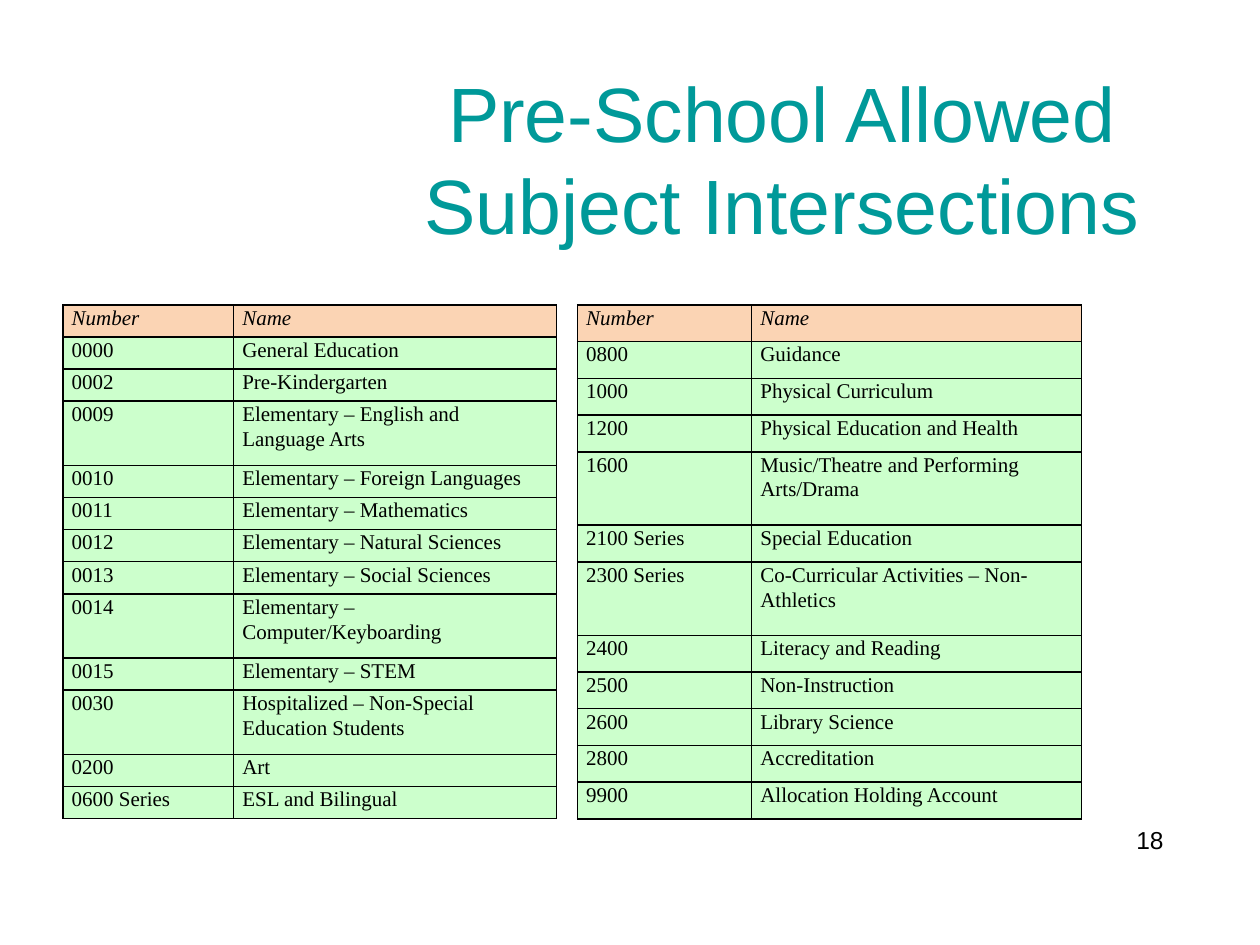
"""Build the slide listing the subject intersections allowed for pre-school."""
from dataclasses import dataclass

from lxml.etree import SubElement
from pptx import Presentation
from pptx.dml.color import RGBColor
from pptx.enum.text import MSO_ANCHOR, PP_ALIGN
from pptx.oxml.ns import qn
from pptx.slide import Slide
from pptx.table import _Cell
from pptx.text.text import Font
from pptx.util import Pt

BLACK, TEAL, PEACH, GREEN = "000000", "009999", "FBD4B4", "CCFFCC"
TABLE_TOP, TABLE_HEIGHT = 174.24, 293.76


@dataclass
class Label:
    text: str
    left: float
    top: float
    width: float
    height: float
    size: float
    color: str
    align: PP_ALIGN
    anchor: MSO_ANCHOR


@dataclass
class Subject:
    number: str
    name: str
    lines: int = 1


@dataclass
class SubjectTable:
    left: float
    widths: tuple[float, float]
    subjects: list[Subject]


LABELS = [
    Label("18", 504, 468, 168, 37.5, 14, BLACK, PP_ALIGN.RIGHT, MSO_ANCHOR.TOP),
    Label("Pre-School Allowed Subject Intersections", 216, 18, 462, 144, 44, TEAL,
          PP_ALIGN.CENTER, MSO_ANCHOR.MIDDLE),
]

TABLES = [
    SubjectTable(36, (97.5, 184.5), [
        Subject("0000", "General Education"),
        Subject("0002", "Pre-Kindergarten"),
        Subject("0009", "Elementary – English and Language Arts", 2),
        Subject("0010", "Elementary – Foreign Languages"),
        Subject("0011", "Elementary – Mathematics"),
        Subject("0012", "Elementary – Natural Sciences"),
        Subject("0013", "Elementary – Social Sciences"),
        Subject("0014", "Elementary – Computer/Keyboarding", 2),
        Subject("0015", "Elementary – STEM"),
        Subject("0030", "Hospitalized – Non-Special Education Students", 2),
        Subject("0200", "Art"),
        Subject("0600 Series", "ESL and Bilingual"),
    ]),
    SubjectTable(330, (99.5, 188.5), [
        Subject("0800", "Guidance"),
        Subject("1000", "Physical Curriculum"),
        Subject("1200", "Physical Education and Health"),
        Subject("1600", "Music/Theatre and Performing Arts/Drama", 2),
        Subject("2100 Series", "Special Education"),
        Subject("2300 Series", "Co-Curricular Activities – Non-Athletics", 2),
        Subject("2400", "Literacy and Reading"),
        Subject("2500", "Non-Instruction"),
        Subject("2600", "Library Science"),
        Subject("2800", "Accreditation"),
        Subject("9900", "Allocation Holding Account"),
    ]),
]


def rgb(color: str) -> RGBColor:
    return RGBColor.from_string(color)


def style_font(font: Font, name: str, size: float, color: str) -> None:
    font.name, font.size = name, Pt(size)
    font.color.rgb = rgb(color)


def add_label(s: Slide, label: Label) -> None:
    sp = s.shapes.add_textbox(Pt(label.left), Pt(label.top), Pt(label.width), Pt(label.height))
    tf = sp.text_frame
    tf.word_wrap, tf.vertical_anchor = True, label.anchor
    tf.text = label.text
    p = tf.paragraphs[0]
    p.alignment = label.align
    style_font(p.runs[0].font, "Arial", label.size, label.color)


def add_borders(cell: _Cell) -> None:
    tc_pr = cell._tc.get_or_add_tcPr()
    for side in ("a:lnL", "a:lnR", "a:lnT", "a:lnB"):
        line = SubElement(tc_pr, qn(side), w=str(Pt(1)))
        SubElement(SubElement(line, qn("a:solidFill")), qn("a:srgbClr"), val=BLACK)


def fill_cell(cell: _Cell, text: str, header: bool) -> None:
    add_borders(cell)
    cell.fill.solid()
    cell.fill.fore_color.rgb = rgb(PEACH if header else GREEN)
    cell.margin_left = cell.margin_right = Pt(5)
    cell.margin_top = cell.margin_bottom = Pt(0)
    cell.text_frame.text = text
    p = cell.text_frame.paragraphs[0]
    p.line_spacing = 1.07
    r = p.runs[0]
    style_font(r.font, "Times New Roman", 12, BLACK)
    r.font.bold, r.font.italic = False, header


def add_subject_table(s: Slide, spec: SubjectTable) -> None:
    rows = [Subject("Number", "Name"), *spec.subjects]
    line_height = TABLE_HEIGHT / sum(row.lines for row in rows)
    table = s.shapes.add_table(len(rows), 2, Pt(spec.left), Pt(TABLE_TOP),
                               Pt(sum(spec.widths)), Pt(TABLE_HEIGHT)).table
    table.first_row = table.horz_banding = False
    for column, width in zip(table.columns, spec.widths):
        column.width = Pt(width)
    for i, row in enumerate(rows):
        table.rows[i].height = Pt(row.lines * line_height)
        for j, text in enumerate((row.number, row.name)):
            fill_cell(table.cell(i, j), text, header=i == 0)


def main() -> None:
    prs = Presentation()
    prs.slide_width, prs.slide_height = Pt(720), Pt(540)
    s = prs.slides.add_slide(prs.slide_layouts[6])
    for label in LABELS:
        add_label(s, label)
    for spec in TABLES:
        add_subject_table(s, spec)
    prs.save("out.pptx")


if __name__ == "__main__":
    main()
